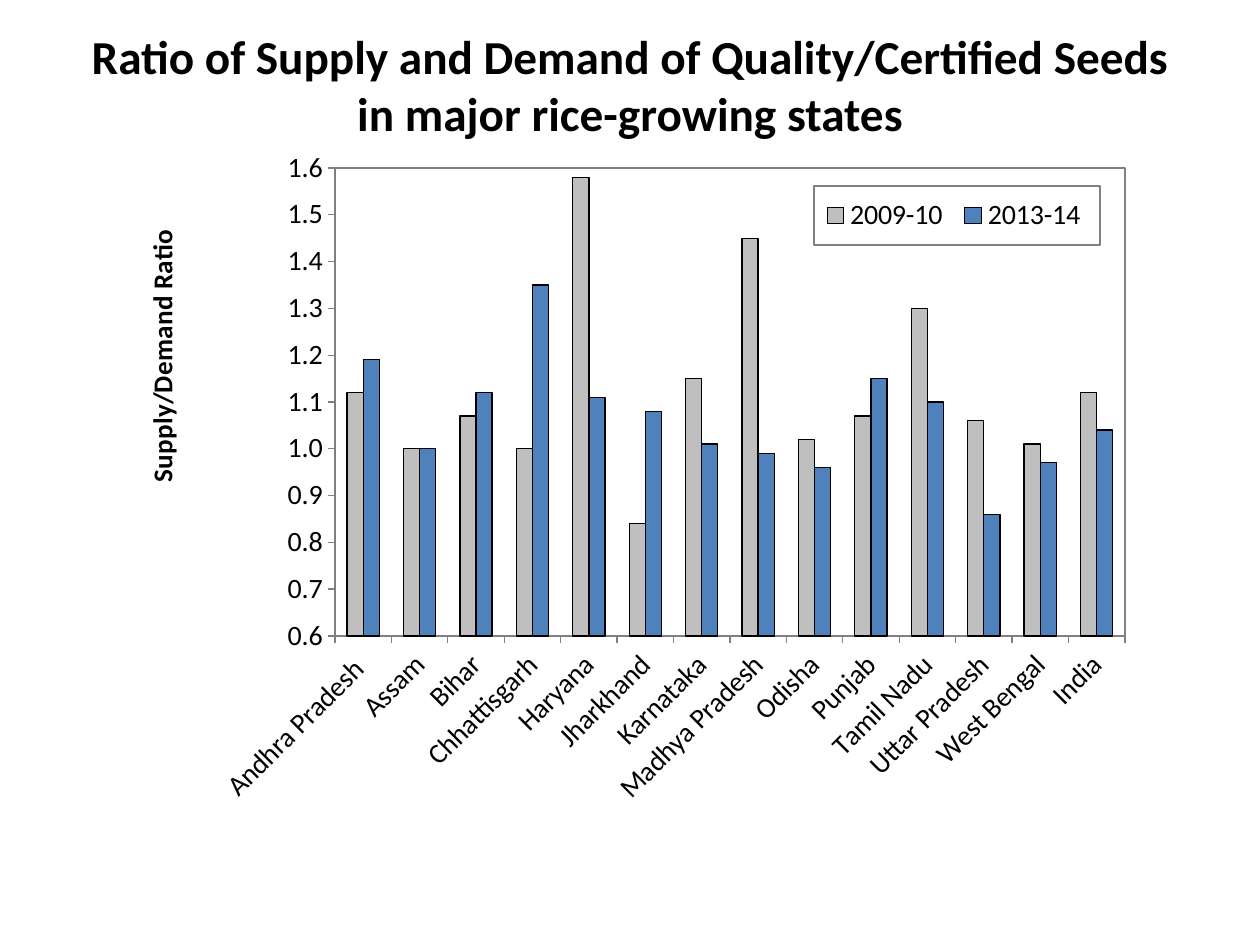
import pptx
import pptx.chart.data
import pptx.dml.color
import pptx.enum.chart
import pptx.enum.text
import pptx.oxml
import pptx.oxml.ns
import pptx.util

# Content
TITLE = "Ratio of Supply and Demand of Quality/Certified Seeds in major rice-growing states"
AXIS_TITLE = "Supply/Demand Ratio"
SERIES = [("2009-10", "grey"), ("2013-14 ", "blue")]
RATIOS = [
    ("Andhra Pradesh ", 1.12, 1.19),
    ("Assam", 1, 1),
    ("Bihar", 1.07, 1.12),
    ("Chhattisgarh", 1, 1.35),
    ("Haryana", 1.58, 1.11),
    ("Jharkhand", 0.84, 1.08),
    ("Karnataka", 1.15, 1.01),
    ("Madhya Pradesh", 1.45, 0.99),
    ("Odisha", 1.02, 0.96),
    ("Punjab", 1.07, 1.15),
    ("Tamil Nadu", 1.3, 1.1),
    ("Uttar Pradesh", 1.06, 0.86),
    ("West Bengal", 1.01, 0.97),
    ("India", 1.12, 1.04),
]
COLORS = {"black": "000000", "grey": "BFBFBF", "blue": "4F81BD", "axis": "808080"}
FONT = "Calibri"

# Boxes in px: left, top, width, height
PX = 914400 / 126
SLIDE_SIZE = (1260, 945)
TITLE_BOX = (63, 21, 1134, 126)
CHART_BOX = (126, 136, 1018, 683)
PLOT_BOX = (335, 168, 790, 468)
LEGEND_BOX = (814, 186, 286, 59)
AXIS_TITLE_AT = (138, 225)


def emu(box):
    return [pptx.util.Emu(round(v * PX)) for v in box]


def rgb(name):
    return pptx.dml.color.RGBColor.from_string(COLORS[name])


def set_font(font, size, bold=False):
    font.name, font.size, font.bold = FONT, pptx.util.Pt(size), bold
    font.color.rgb = rgb("black")


def set_line(line, color):
    line.color.rgb = rgb(color)
    line.width = pptx.util.Pt(0.75)


def layout(box, inner=False):
    """Manual chart layout, as fractions of the chart box."""
    left, top, width, height = CHART_BOX
    parts = [("layoutTarget", "inner")] if inner else []
    parts += [("xMode", "edge"), ("yMode", "edge")]
    fractions = [(box[0] - left) / width, (box[1] - top) / height]
    if len(box) == 4:
        fractions += [box[2] / width, box[3] / height]
    parts += [(tag, round(f, 4)) for tag, f in zip("xywh", fractions)]
    body = "".join(f'<c:{tag} val="{val}"/>' for tag, val in parts)
    return pptx.oxml.parse_xml(
        f'<c:layout {pptx.oxml.ns.nsdecls("c")}><c:manualLayout>{body}'
        "</c:manualLayout></c:layout>")


def place(element, new, after=None):
    for old in element.findall(pptx.oxml.ns.qn("c:layout")):
        element.remove(old)
    if after is None:
        element.insert(0, new)
    else:
        element.find(pptx.oxml.ns.qn(after)).addnext(new)


def outline(color):
    return pptx.oxml.parse_xml(
        f'<c:spPr {pptx.oxml.ns.nsdecls("c", "a")}><a:noFill/><a:ln w="9525"><a:solidFill>'
        f'<a:srgbClr val="{COLORS[color]}"/></a:solidFill></a:ln></c:spPr>')


prs = pptx.Presentation()
prs.slide_width, prs.slide_height = emu(SLIDE_SIZE)
slide = prs.slides.add_slide(prs.slide_layouts[6])

# Title
tf = slide.shapes.add_textbox(*emu(TITLE_BOX)).text_frame
tf.word_wrap = True
tf.vertical_anchor = pptx.enum.text.MSO_ANCHOR.MIDDLE
p = tf.paragraphs[0]
p.text = TITLE
p.alignment = pptx.enum.text.PP_ALIGN.CENTER
set_font(p.font, 27, True)

# Chart and series
data = pptx.chart.data.CategoryChartData()
data.categories = [row[0] for row in RATIOS]
for i, (name, _) in enumerate(SERIES, 1):
    data.add_series(name, [row[i] for row in RATIOS])
chart = slide.shapes.add_chart(
    pptx.enum.chart.XL_CHART_TYPE.COLUMN_CLUSTERED, *emu(CHART_BOX), data).chart
set_font(chart.font, 16)
chart.has_title = False
plot = chart.plots[0]
plot.gap_width, plot.overlap, plot.vary_by_categories = 150, 0, False
for series, (_, color) in zip(plot.series, SERIES):
    series.format.fill.solid()
    series.format.fill.fore_color.rgb = rgb(color)
    set_line(series.format.line, "black")

# Axes
for axis in (chart.category_axis, chart.value_axis):
    axis.has_major_gridlines = False
    axis.major_tick_mark = pptx.enum.chart.XL_TICK_MARK.OUTSIDE
    set_line(axis.format.line, "axis")
    set_font(axis.tick_labels.font, 16)
chart.category_axis._element.txPr.bodyPr.set("rot", "-2700000")
value_axis = chart.value_axis
value_axis.minimum_scale, value_axis.maximum_scale, value_axis.major_unit = 0.6, 1.6, 0.1
value_axis.tick_labels.number_format = "0.0"
value_axis.tick_labels.number_format_is_linked = False
tf = value_axis.axis_title.text_frame
tf.text = AXIS_TITLE
tf._txBody.bodyPr.set("rot", "-5400000")
set_font(tf.paragraphs[0].font, 15.5, True)
place(value_axis.axis_title._element, layout(AXIS_TITLE_AT), "c:tx")

# Legend and plot frame
chart.has_legend = True
legend = chart.legend
legend.position = pptx.enum.chart.XL_LEGEND_POSITION.RIGHT
legend.include_in_layout = True
set_font(legend.font, 16)
place(legend._element, layout(LEGEND_BOX), "c:legendPos")
legend._element.find(pptx.oxml.ns.qn("c:overlay")).addnext(outline("axis"))
plot_area = chart._chartSpace.chart.plotArea
place(plot_area, layout(PLOT_BOX, inner=True))
plot_area.append(outline("axis"))

prs.save("out.pptx")
